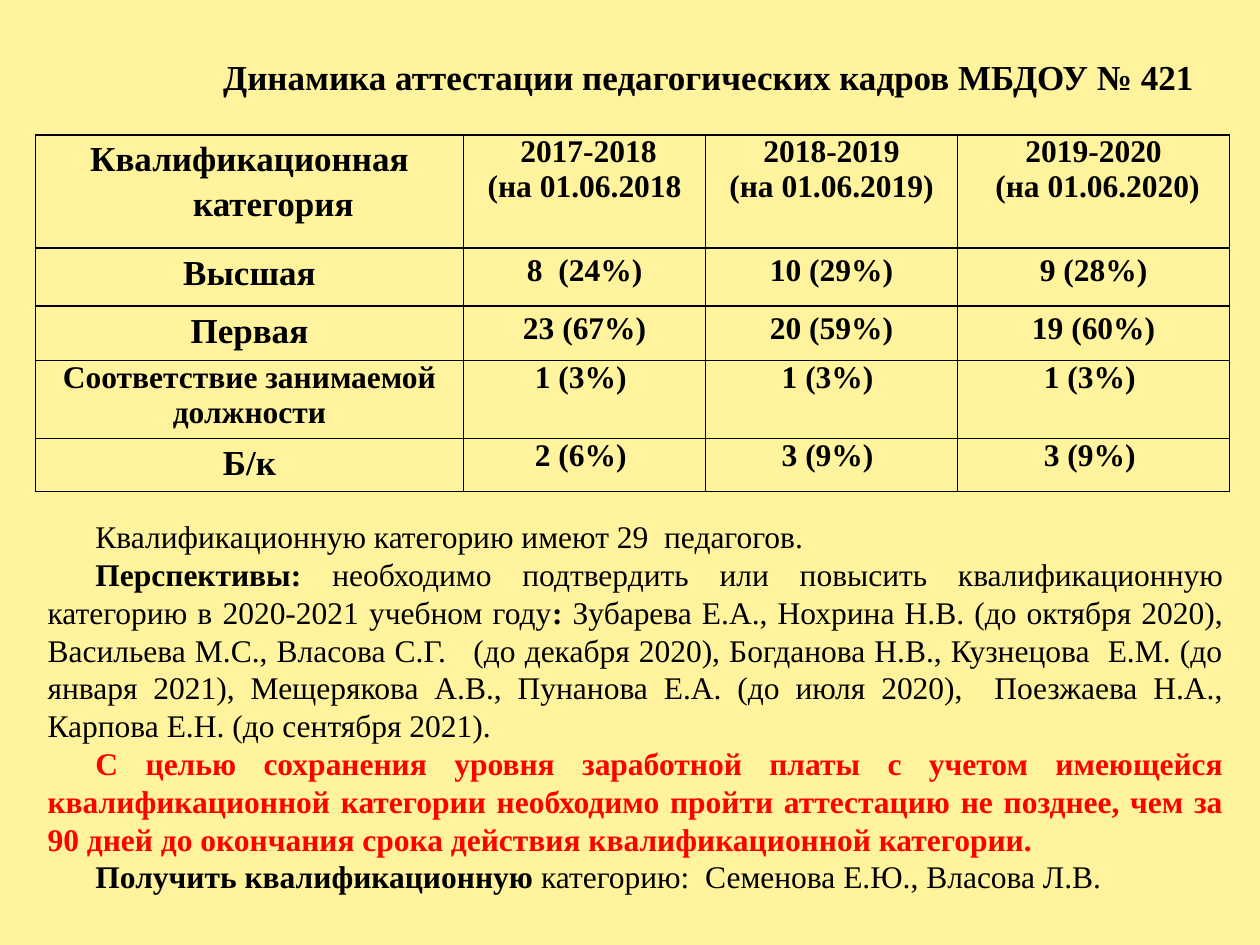
from lxml.etree import SubElement
from pptx import Presentation
from pptx.dml.color import RGBColor
from pptx.enum.shapes import MSO_SHAPE
from pptx.enum.text import MSO_ANCHOR, PP_ALIGN as Align
from pptx.oxml.ns import qn
from pptx.util import Inches, Pt

CREAM = RGBColor(0xFF, 0xF3, 0x9D)
BLACK = RGBColor(0, 0, 0)
RED = RGBColor(0xFF, 0, 0)
FONT = "Times New Roman"
INDENT = 0.38
LOOSE = 1.15

# Content: a paragraph is a list of (text, bold, colour) runs
TITLE = [[("Динамика аттестации педагогических кадров МБДОУ № 421", True, BLACK)]]

COLUMN_WIDTHS = [3.4, 1.92, 2, 2.16]
# Each row: height, category size, category spacing, value spacing, side margin, cells
ROWS = [
    (0.9, 20, LOOSE, 1, 0.04, ["Квалификационная\nкатегория", " 2017-2018\n(на 01.06.2018",
                               "2018-2019\n(на 01.06.2019)", "2019-2020\n (на 01.06.2020)"]),
    (0.46, 20, LOOSE, LOOSE, 0.05, ["Высшая", "8  (24%)", "10 (29%)", "9 (28%)"]),
    (0.43, 20, LOOSE, LOOSE, 0.05, ["Первая", "23 (67%)", "20 (59%)", "19 (60%)"]),
    (0.62, 18, 1, 1, 0.04, ["Соответствие занимаемой должности",
                            "1 (3%) ", "1 (3%) ", "1 (3%) "]),
    (0.42, 20, LOOSE, 1, 0.04, ["Б/к", "2 (6%) ", "3 (9%) ", "3 (9%) "]),
]

SUMMARY = [
    [("Квалификационную категорию имеют 29  педагогов.", False, BLACK)],
    [("Перспективы: ", True, BLACK),
     ("необходимо подтвердить или повысить квалификационную категорию "
      "в 2020-2021 учебном году", False, BLACK),
     (": ", True, BLACK),
     ("Зубарева Е.А., Нохрина Н.В. (до октября 2020), Васильева М.С., "
      "Власова С.Г.   (до декабря 2020), Богданова Н.В., Кузнецова  Е.М. "
      "(до января 2021), Мещерякова А.В., Пунанова Е.А. (до июля 2020),  "
      "Поезжаева Н.А., Карпова Е.Н. (до сентября 2021).", False, BLACK)],
    [("С целью сохранения уровня заработной платы с учетом имеющейся "
      "квалификационной категории необходимо пройти аттестацию не позднее, "
      "чем за 90 дней до окончания срока действия квалификационной категории.",
      True, RED)],
    [("Получить квалификационную ", True, BLACK),
     ("категорию:  Семенова Е.Ю., Власова Л.В.", False, BLACK)],
]


def set_all(target, **values):
    for key, value in values.items():
        setattr(target, key, value)


def write(frame, paragraphs, size, align, spacing=None):
    for i, runs in enumerate(paragraphs):
        paragraph = frame.paragraphs[0] if i == 0 else frame.add_paragraph()
        set_all(paragraph, alignment=align, line_spacing=spacing)
        for text, bold, colour in runs:
            run = paragraph.add_run()
            run.text = text
            set_all(run.font, name=FONT, size=Pt(size), bold=bold)
            run.font.color.rgb = colour


def indent(paragraph):
    paragraph._p.get_or_add_pPr().set("indent", str(Inches(INDENT)))


def add_panel(slide, box, paragraphs, size, align):
    panel = slide.shapes.add_shape(MSO_SHAPE.RECTANGLE, *map(Inches, box))
    panel.shadow.inherit = False
    panel.fill.solid()
    panel.fill.fore_color.rgb = CREAM
    panel.line.fill.background()
    frame = panel.text_frame
    set_all(frame, word_wrap=True, vertical_anchor=MSO_ANCHOR.MIDDLE,
            margin_left=Inches(0.1), margin_right=Inches(0.1),
            margin_top=Inches(0.05), margin_bottom=0)
    write(frame, paragraphs, size, align)
    for paragraph in frame.paragraphs:
        indent(paragraph)


def add_borders(cell):
    properties = cell._tc.get_or_add_tcPr()
    for side in ("a:lnL", "a:lnR", "a:lnT", "a:lnB"):
        line = SubElement(properties, qn(side), w=str(Pt(1)))
        fill = SubElement(line, qn("a:solidFill"))
        SubElement(fill, qn("a:srgbClr"), val=str(BLACK))


prs = Presentation()
set_all(prs, slide_width=Inches(10), slide_height=Inches(7.5))
slide = prs.slides.add_slide(prs.slide_layouts[6])
slide.background.fill.solid()
slide.background.fill.fore_color.rgb = CREAM

# Title
add_panel(slide, (1.22, 0.05, 8.43, 1.06), TITLE, 20, Align.CENTER)

# Qualification table
table = slide.shapes.add_table(
    len(ROWS), len(COLUMN_WIDTHS), Inches(0.28), Inches(1.07),
    Inches(sum(COLUMN_WIDTHS)), Inches(sum(row[0] for row in ROWS))).table
set_all(table, first_row=False, horz_banding=False)
for column, width in zip(table.columns, COLUMN_WIDTHS):
    column.width = Inches(width)

for r, (height, category_size, category_spacing, value_spacing, margin, texts) in enumerate(ROWS):
    table.rows[r].height = Inches(height)
    for c, text in enumerate(texts):
        cell = table.cell(r, c)
        side = Inches(0.04 if c == 0 else margin)
        set_all(cell, margin_left=side, margin_right=side, margin_top=0, margin_bottom=0)
        size, spacing = (category_size, category_spacing) if c == 0 else (18, value_spacing)
        lines = [[(line, True, BLACK)] for line in text.split("\n")]
        write(cell.text_frame, lines, size, Align.CENTER, float(spacing))
        add_borders(cell)
        cell.fill.background()
indent(table.cell(0, 0).text_frame.paragraphs[1])

# Summary and plans
add_panel(slide, (0.28, 4.04, 9.53, 3.08), SUMMARY, 18, Align.JUSTIFY)

prs.save("out.pptx")
